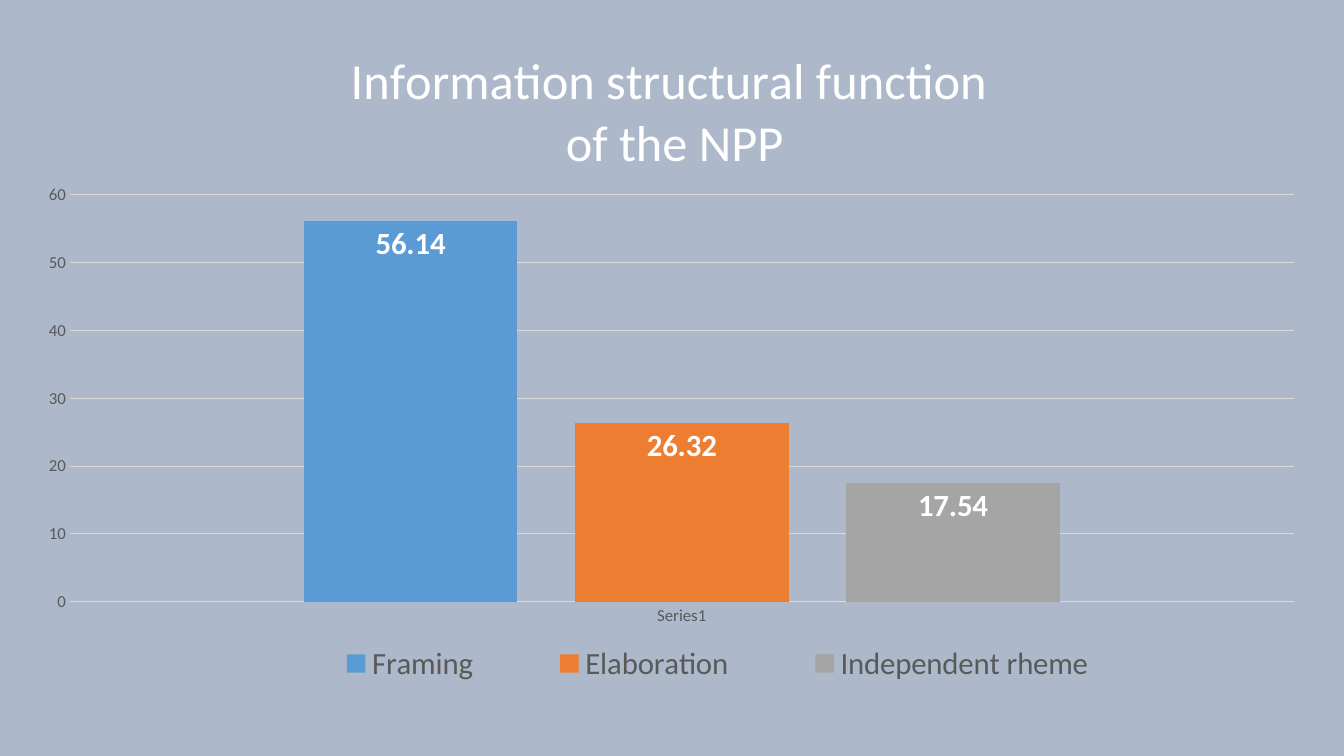
import pptx
import pptx.util
import pptx.chart.data
import pptx.dml.color
import pptx.enum.chart
import pptx.oxml
import pptx.oxml.ns

WIDE = pptx.util.Inches(13.33)
HIGH = pptx.util.Inches(7.5)
FACE = "Calibri"
GREY = "595959"
RULE = "D9D9D9"
SHARES = [
    ("Framing", 56.14, "5B9BD5"),
    ("Elaboration", 26.32, "ED7D31"),
    ("Independent rheme", 17.54, "A5A5A5"),
]


def paint(fill, code):
    fill.solid()
    fill.fore_color.rgb = pptx.dml.color.RGBColor.from_string(code)


def style(font, size, code, bold=False):
    font.name = FACE
    font.size = pptx.util.Pt(size)
    font.bold = bold
    paint(font.fill, code)


def rule(line):
    paint(line.fill, RULE)
    line.width = pptx.util.Pt(0.75)


def place(chart, tag, prior, spots):
    name = pptx.oxml.ns.qn
    part = chart.element.find(".//" + name(tag))
    for old in part.findall(name("c:layout")):
        part.remove(old)
    modes = '<c:xMode val="edge"/><c:yMode val="edge"/>'
    if tag == "c:plotArea":
        modes = '<c:layoutTarget val="inner"/>' + modes
    sides = "".join(f'<c:{side} val="{share}"/>' for side, share in zip("xywh", spots))
    layout = pptx.oxml.parse_xml(
        f'<c:layout {pptx.oxml.ns.nsdecls("c")}><c:manualLayout>'
        f"{modes}{sides}</c:manualLayout></c:layout>"
    )
    if prior:
        part.find(name(prior)).addnext(layout)
    else:
        part.insert(0, layout)


def add_bars(slide):
    data = pptx.chart.data.CategoryChartData()
    data.categories = ["Series1"]
    for name, value, code in SHARES:
        data.add_series(name, [value])
    chart = slide.shapes.add_chart(
        pptx.enum.chart.XL_CHART_TYPE.COLUMN_CLUSTERED,
        int(WIDE * 0.0173), int(HIGH * 0.0253),
        int(WIDE * 0.9655), int(HIGH * 0.8973), data,
    ).chart
    style(chart.font, 10, "000000")
    plot = chart.plots[0]
    plot.gap_width = 219
    plot.overlap = -27
    plot.vary_by_categories = False
    for bar, (name, value, code) in zip(plot.series, SHARES):
        paint(bar.format.fill, code)
        tags = bar.data_labels
        tags.show_value = True
        tags.position = pptx.enum.chart.XL_LABEL_POSITION.INSIDE_END
        style(tags.font, 22, "FFFFFF", True)
    return chart


def set_title(chart):
    chart.has_title = True
    frame = chart.chart_title.text_frame
    frame.text = "Information structural function \nof the NPP"
    for para in frame.paragraphs:
        for run in para.runs:
            style(run.font, 36, "FFFFFF")
    place(chart, "c:title", "c:tx", (0.25, 0.04))


def set_axes(chart):
    for axis in (chart.category_axis, chart.value_axis):
        axis.major_tick_mark = pptx.enum.chart.XL_TICK_MARK.NONE
        axis.minor_tick_mark = pptx.enum.chart.XL_TICK_MARK.NONE
        style(axis.tick_labels.font, 12, GREY)
    rule(chart.category_axis.format.line)
    scale = chart.value_axis
    scale.minimum_scale = 0
    scale.maximum_scale = 60
    scale.major_unit = 10
    scale.format.line.fill.background()
    scale.has_major_gridlines = True
    rule(scale.major_gridlines.format.line)
    place(chart, "c:plotArea", None, (0.036, 0.259, 0.943, 0.6))


def set_legend(chart):
    chart.has_legend = True
    chart.legend.position = pptx.enum.chart.XL_LEGEND_POSITION.BOTTOM
    chart.legend.include_in_layout = False
    style(chart.legend.font, 22, GREY)
    place(chart, "c:legend", "c:legendPos", (0.19, 0.91, 0.69, 0.08))


def main():
    deck = pptx.Presentation()
    deck.slide_width = WIDE
    deck.slide_height = HIGH
    slide = deck.slides.add_slide(deck.slide_layouts[6])
    paint(slide.background.fill, "ADB9CA")
    chart = add_bars(slide)
    set_title(chart)
    set_axes(chart)
    set_legend(chart)
    deck.save("out.pptx")


if __name__ == "__main__":
    main()
